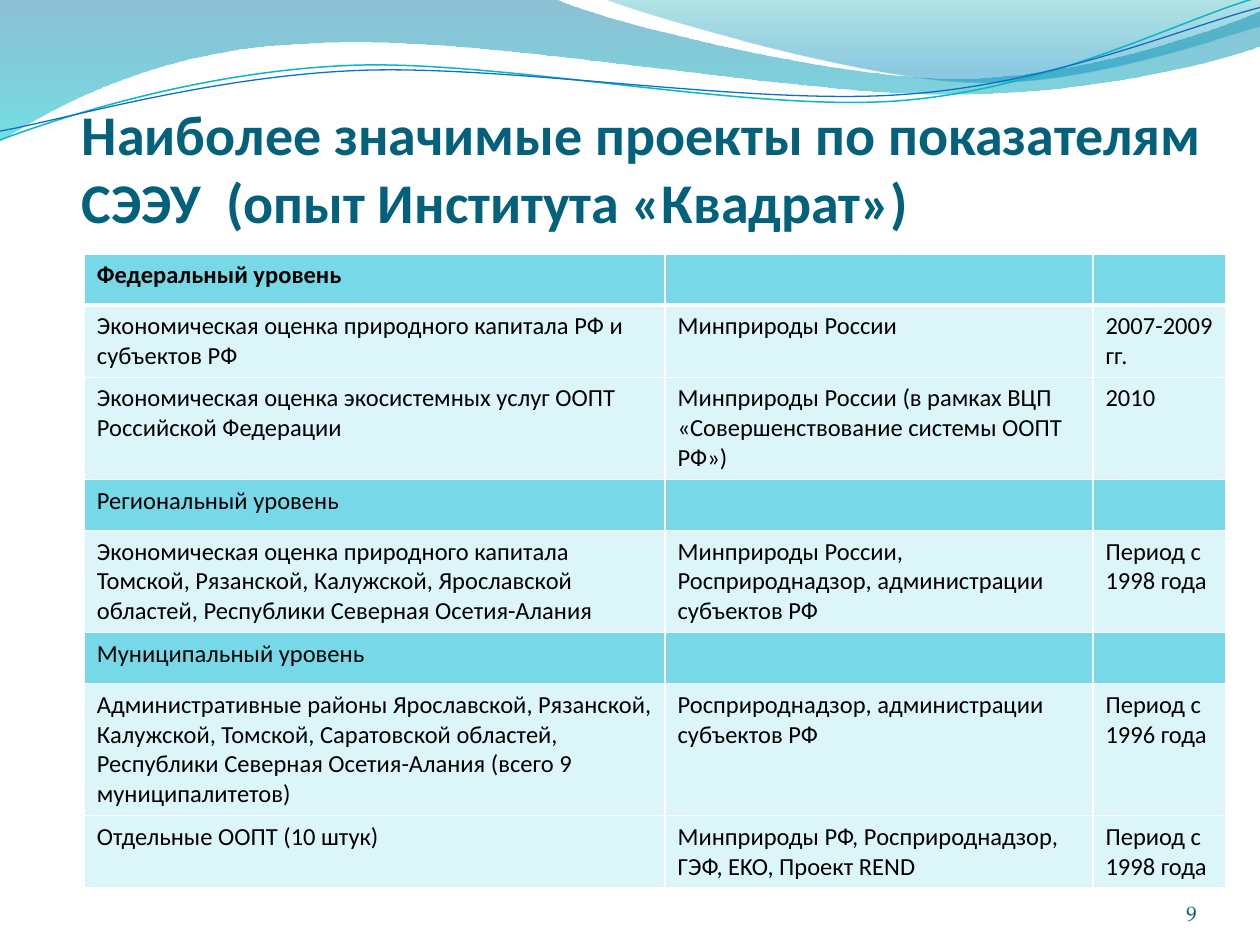
import math

from lxml import etree
from pptx import Presentation
from pptx import util as u
from pptx.dml.color import RGBColor
from pptx.enum import text
from pptx.oxml import parse_xml
from pptx.oxml.ns import nsdecls, qn

COLORS = {
    "title": "04617B", "number": "045D75", "text": "000000", "border": "FFFFFF",
    "level": "77D9E8", "project": "DBF5F9", "teal": "0AB8BF", "blue": "0F6FC6",
    "band_top": "0074A1", "band_bottom": "00C6CF",
    "sheen_top": "00A1A9", "sheen_bottom": "008BBF",
}
ROWS = [
    ("Федеральный уровень",),
    ("Экономическая оценка природного капитала РФ и субъектов РФ",
     "Минприроды России", "2007-2009 гг."),
    ("Экономическая оценка экосистемных услуг ООПТ Российской Федерации",
     "Минприроды России (в рамках ВЦП «Совершенствование системы ООПТ РФ»)", "2010"),
    ("Региональный уровень",),
    ("Экономическая оценка природного капитала Томской, Рязанской, Калужской, "
     "Ярославской областей, Республики Северная Осетия-Алания",
     "Минприроды России, Росприроднадзор, администрации субъектов РФ",
     "Период с 1998 года"),
    ("Муниципальный уровень",),
    ("Административные районы Ярославской, Рязанской, Калужской, Томской, "
     "Саратовской областей, Республики Северная Осетия-Алания (всего 9 муниципалитетов)",
     "Росприроднадзор, администрации субъектов РФ", "Период с 1996 года"),
    ("Отдельные ООПТ (10 штук)",
     "Минприроды РФ, Росприроднадзор, ГЭФ, EKO, Проект REND", "Период с 1998 года"),
]
BAND = [[(-0.5, -0.2)], [(317, -0.7)], [(343, 12), (478, 45), (546, 45)],
        [(614, 45), (690, 19), (720, 6.5)], [(720.7, 26)],
        [(708, 32), (626, 55), (537, 54)], [(448, 54), (275, 20), (185, 24.5)],
        [(93, 26), (33, 60), (-0.7, 81)]]
SHEEN = [[(345, -0.7)], [(366, 8), (491, 45), (554, 47)],
         [(616, 50), (692, 23), (720, 15)], [(720, 0)]]
TEAL_WAVE = [[(0, 80)], [(34.6, 67), (113.8, 41), (199.4, 37.4)],
             [(284.4, 33.8), (427, 64.1), (513.4, 57.6)],
             [(599.8, 51.1), (675.4, 10.8), (718.6, -1.4)]]
BLUE_WAVE = [[(0, 74.9)], [(33.8, 69.1), (118.1, 43.9), (203.8, 40.3)],
             [(290.2, 36.7), (429.8, 60.5), (516.2, 54)],
             [(601.9, 48.2), (677.5, 15.1), (720, 4.3)]]
TILT = 2.7


def rgb(name):
    return RGBColor.from_string(COLORS[name])


def turn(steps, cx, cy):
    cos, sin = math.cos(math.radians(TILT)), math.sin(math.radians(TILT))
    return [[(cx + (x - cx) * cos - (y - cy) * sin, cy + (x - cx) * sin + (y - cy) * cos)
             for x, y in step] for step in steps]


class Deck:
    font = "Calibri"

    def __init__(self, prs):
        self.s = prs.slides.add_slide(prs.slide_layouts[5])

    def style(self, p, size, color, bold=False, font=None):
        p.font.name = font or self.font
        p.font.size = u.Pt(size)
        p.font.bold = bold
        p.font.color.rgb = rgb(color)

    def place(self, sp, x, y, w, h):
        sp.left, sp.top, sp.width, sp.height = map(u.Pt, (x, y, w, h))

    def frame(self, sp, top=0):
        tf = sp.text_frame
        tf.word_wrap = True
        tf.auto_size = text.MSO_AUTO_SIZE.NONE
        tf.vertical_anchor = text.MSO_ANCHOR.BOTTOM
        tf.margin_left = tf.margin_right = tf.margin_bottom = 0
        tf.margin_top = u.Pt(top)
        return tf

    def outline(self, steps, closed):
        start, *rest = [(u.Pt(x), u.Pt(y)) for step in steps for x, y in step]
        builder = self.s.shapes.build_freeform(*start, scale=1.0)
        builder.add_line_segments(rest, close=closed)
        sp = builder.convert_to_shape()
        sp.shadow.inherit = False
        lines = iter(list(sp._element.iter(qn("a:lnTo"))))
        for step in steps[1:]:
            first, *others = [next(lines) for _ in step]
            if others:
                first.tag = qn("a:cubicBezTo")
            for line in others:
                first.append(line[0])
                line.getparent().remove(line)
        return sp

    def area(self, steps, stops):
        sp = self.outline(steps, True)
        sp.line.fill.background()
        sp.fill.gradient()
        sp.fill.gradient_angle = 270
        for stop, (position, color, _) in zip(sp.fill.gradient_stops, stops):
            stop.position = position
            stop.color.rgb = rgb(color)
        colors = list(sp._element.spPr.iter(qn("a:srgbClr")))
        for clr, (_, _, opacity) in zip(colors, stops):
            etree.SubElement(clr, qn("a:alpha")).set("val", str(opacity * 1000))

    def wave(self, steps, center, color, width):
        sp = self.outline(turn(steps, *center), False)
        sp.rotation = 360 - TILT
        sp.fill.background()
        sp.line.color.rgb = rgb(color)
        sp.line.width = u.Pt(width)

    def title(self, words, x, y, w, h):
        sp = self.s.shapes.title
        self.s.shapes._spTree.append(sp._element)
        self.place(sp, x, y, w, h)
        tf = self.frame(sp, 3.6)
        tf.text = words
        p = tf.paragraphs[0]
        p.alignment = text.PP_ALIGN.LEFT
        self.style(p, 32, "title", True)

    def number(self, words, x, y, w, h):
        sp = self.s.shapes.add_textbox(*map(u.Pt, (x, y, w, h)))
        tf = self.frame(sp)
        tf.text = words
        p = tf.paragraphs[0]
        p.alignment = text.PP_ALIGN.RIGHT
        self.style(p, 12, "number", font="TeX Gyre Pagella")

    def borders(self, cell, bottom):
        tcPr = cell._tc.get_or_add_tcPr()
        for i, (side, width) in enumerate(zip("LRTB", (1, 1, 1, bottom))):
            tcPr.insert(i, parse_xml(
                f'<a:ln{side} {nsdecls("a")} w="{u.Pt(width)}"><a:solidFill>'
                f'<a:srgbClr val="{COLORS["border"]}"/></a:solidFill></a:ln{side}>'))

    def table(self, rows, x, y, widths, row_height):
        tbl = self.s.shapes.add_table(
            len(rows), len(widths),
            *map(u.Pt, (x, y, sum(widths), row_height * len(rows)))).table
        tbl.first_row = tbl.horz_banding = False
        for column, width in zip(tbl.columns, widths):
            column.width = u.Pt(width)
        for i, row in enumerate(rows):
            for j in range(len(widths)):
                cell = tbl.cell(i, j)
                if j < len(row):
                    cell.text = row[j]
                self.style(cell.text_frame.paragraphs[0], 14, "text", i == 0)
                cell.fill.solid()
                cell.fill.fore_color.rgb = rgb("level" if len(row) == 1 else "project")
                self.borders(cell, 3 if i == 0 else 1)


def main():
    prs = Presentation()
    prs.slide_width, prs.slide_height = u.Pt(720), u.Pt(540)
    deck = Deck(prs)
    deck.area(BAND, [(0, "band_top", 45), (1, "band_bottom", 55)])
    deck.area(SHEEN, [(0, "sheen_top", 30), (0.8, "sheen_bottom", 45)])
    deck.wave(TEAL_WAVE, (359.3, 41.4), "teal", 0.85)
    deck.wave(BLUE_WAVE, (359.6, 42.5), "blue", 0.75)
    deck.title("Наиболее значимые проекты по показателям СЭЭУ  (опыт Института «Квадрат»)",
               46.8, 43.9, 648, 90)
    deck.number("9", 624, 500.4, 60, 28.8)
    deck.table(ROWS, 48.2, 145.1, (331.8, 244.6, 75.8), 29.2)
    prs.save("out.pptx")


if __name__ == "__main__":
    main()
